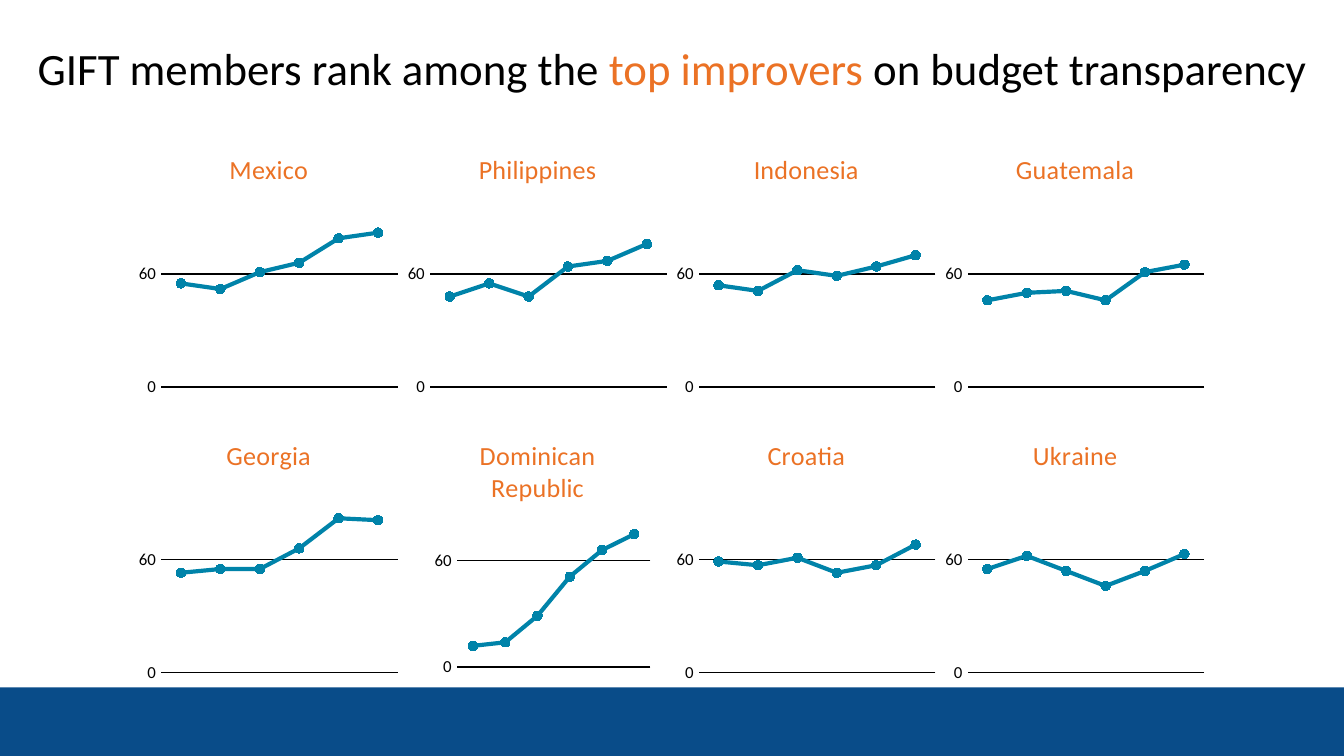
from lxml import etree
from pptx import Presentation
from pptx import util as u
from pptx.chart import data
from pptx.dml.color import RGBColor
from pptx.enum import chart as charts, shapes, text
from pptx.oxml import ns

PX = 9525  # EMU per pixel, 96 pixels to the inch
WIDTH, HEIGHT = 960, 540
FONT = "Calibri"
BLACK, NAVY, ORANGE, TEAL = "000000", "094C89", "EB7225", "0083A9"

# Country scores in reading order, four to a row
SCORES = {
    "Mexico": (55, 52, 61, 66, 79, 82),
    "Philippines": (48, 55, 48, 64, 67, 76),
    "Indonesia": (54, 51, 62, 59, 64, 70),
    "Guatemala": (46, 50, 51, 46, 61, 65),
    "Georgia": (53, 55, 55, 66, 82, 81),
    "Dominican Republic": (12, 14, 29, 51, 66, 75),
    "Croatia": (59, 57, 61, 53, 57, 68),
    "Ukraine": (55, 62, 54, 46, 54, 63),
}
COLUMNS = 4
GRID_LEFT, GRID_TOP = 96, 96
CHART_SIZE, ROW_STEP = 192, 204

# Inner plot area as shares of the chart: left, top, width, height
PLOT = (0.1, 0.24, 0.88, 0.7)
TWO_LINE_PLOT = (0.2, 0.26, 0.72, 0.66)


def px(*lengths):
    return [u.Emu(length * PX) for length in lengths]


def color(value):
    return RGBColor.from_string(value)


def format_font(font, size, fill):
    font.name = FONT
    font.size = u.Pt(size)
    font.bold = False
    font.color.rgb = color(fill)


def add_text(paragraph, content, size=14, fill=BLACK):
    run = paragraph.add_run()
    run.text = content
    format_font(run.font, size, fill)


def set_plot_layout(chart, box):
    plot_area = chart._chartSpace.chart.plotArea
    for old in plot_area.findall(ns.qn("c:layout")):
        plot_area.remove(old)
    layout = etree.Element(ns.qn("c:layout"))
    manual = etree.SubElement(layout, ns.qn("c:manualLayout"))
    values = [("layoutTarget", "inner"), ("xMode", "edge"), ("yMode", "edge")]
    values += zip("xywh", box)
    for name, value in values:
        etree.SubElement(manual, ns.qn(f"c:{name}")).set("val", str(value))
    plot_area.insert(0, layout)


class Deck:
    def __init__(self):
        self.presentation = Presentation()
        self.presentation.slide_width, self.presentation.slide_height = px(WIDTH, HEIGHT)
        self.slide = self.presentation.slides.add_slide(self.presentation.slide_layouts[5])

    def bar(self, left, top, width, height, fill):
        shape = self.slide.shapes.add_shape(
            shapes.MSO_SHAPE.RECTANGLE, *px(left, top, width, height))
        shape.shadow.inherit = False
        shape.fill.solid()
        shape.fill.fore_color.rgb = color(fill)
        shape.line.fill.background()

    def title(self, left, top, width, height, parts):
        shape = self.slide.shapes.title
        shape.left, shape.top, shape.width, shape.height = px(left, top, width, height)
        frame = shape.text_frame
        frame.word_wrap = True
        frame.auto_size = text.MSO_AUTO_SIZE.NONE
        frame.vertical_anchor = text.MSO_ANCHOR.MIDDLE
        paragraph = frame.paragraphs[0]
        paragraph.alignment = text.PP_ALIGN.CENTER
        for content, fill in parts:
            add_text(paragraph, content, size=24, fill=fill)

    def line_chart(self, left, top, size, name, values, plot_box):
        chart_data = data.CategoryChartData(number_format="0")
        chart_data.categories = [str(number + 1) for number in range(len(values))]
        chart_data.add_series(name, values)
        chart = self.slide.shapes.add_chart(
            charts.XL_CHART_TYPE.LINE_MARKERS, *px(left, top, size, size), chart_data).chart
        format_font(chart.font, 10, NAVY)
        chart.has_legend = False
        chart.has_title = True
        add_text(chart.chart_title.text_frame.paragraphs[0], name, fill=ORANGE)
        chart.chart_title.include_in_layout = False
        set_plot_layout(chart, plot_box)

        # Axes
        chart.category_axis.visible = False
        axis = chart.value_axis
        axis.minimum_scale, axis.maximum_scale, axis.major_unit = 0, 100, 60
        axis.major_tick_mark = axis.minor_tick_mark = charts.XL_TICK_MARK.NONE
        axis.format.line.fill.background()
        axis.has_major_gridlines = True
        axis.major_gridlines.format.line.color.rgb = color(BLACK)
        axis.major_gridlines.format.line.width = u.Pt(0.75)
        axis.tick_labels.number_format = "0"
        axis.tick_labels.number_format_is_linked = False
        format_font(axis.tick_labels.font, 9, BLACK)

        # Series line and markers
        plot = chart.plots[0]
        plot.vary_by_categories = False
        series = plot.series[0]
        series.smooth = False
        series.format.line.color.rgb = color(TEAL)
        series.format.line.width = u.Pt(2.25)
        marker = series.marker
        marker.style, marker.size = charts.XL_MARKER_STYLE.CIRCLE, 5
        marker.format.fill.solid()
        marker.format.fill.fore_color.rgb = color(TEAL)
        marker.format.line.color.rgb = color(TEAL)


def main():
    deck = Deck()

    # Footer band and heading
    deck.bar(0, 491, WIDTH, 49, NAVY)
    deck.title(0, 24, WIDTH, 48, [
        ("GIFT members rank among the ", BLACK),
        ("top improvers ", ORANGE),
        ("on budget transparency", BLACK),
    ])

    # Grid of country charts
    for index, (country, values) in enumerate(SCORES.items()):
        row, column = divmod(index, COLUMNS)
        plot_box = TWO_LINE_PLOT if " " in country else PLOT
        deck.line_chart(GRID_LEFT + column * CHART_SIZE, GRID_TOP + row * ROW_STEP,
                        CHART_SIZE, country, values, plot_box)

    deck.presentation.save("out.pptx")


if __name__ == "__main__":
    main()
